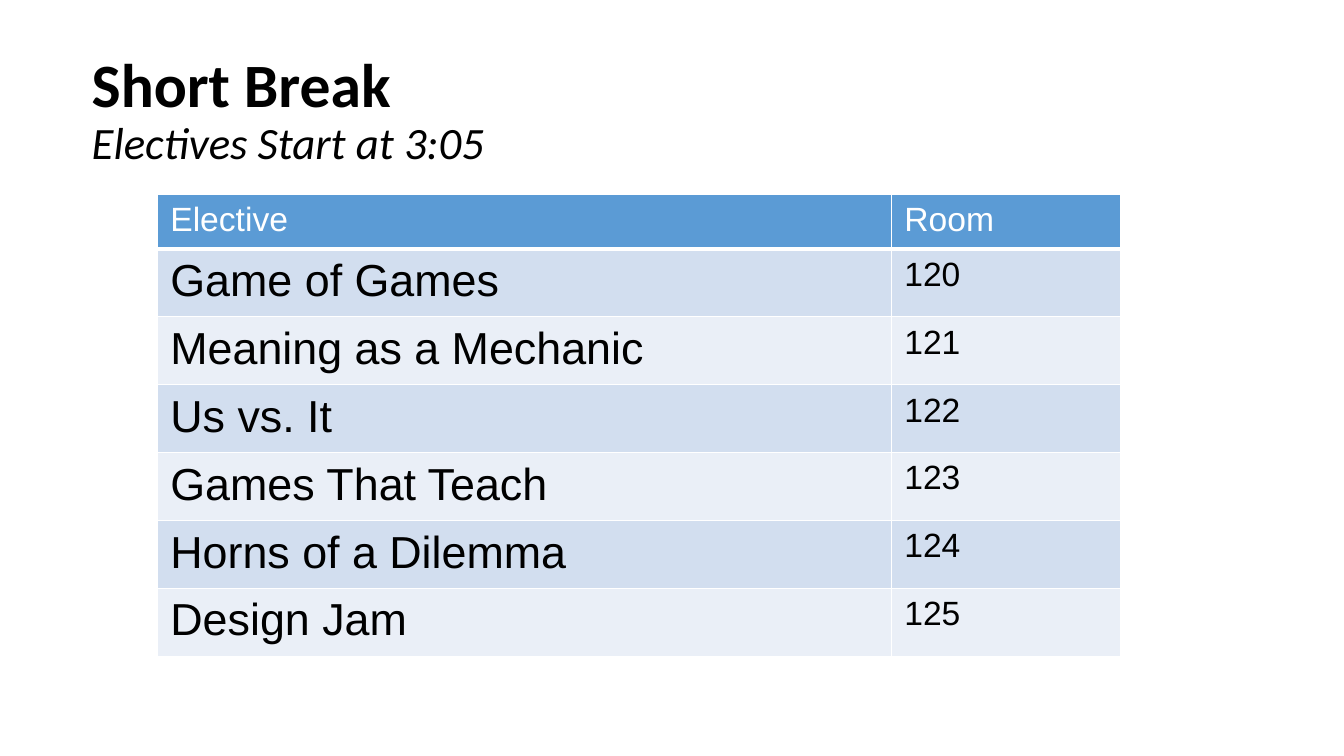
import pptx
import pptx.dml.color
import pptx.enum.text
import pptx.oxml
import pptx.oxml.ns
import pptx.util

Inches = pptx.util.Inches
ELECTIVES = [
    "Game of Games",
    "Meaning as a Mechanic",
    "Us vs. It",
    "Games That Teach",
    "Horns of a Dilemma",
    "Design Jam",
]
FIRST_ROOM = 120
COLUMN_WIDTHS = [7.28, 2.27]
HEADER_HEIGHT, ROW_HEIGHT = 0.53, 0.67
HEADER_FILL = "5B9BD5"
BAND_FILLS = ["D2DEEF", "EAEFF7"]
BLACK, WHITE = "000000", "FFFFFF"


def color(hex_text):
    """Turn a hex string into a colour."""
    return pptx.dml.color.RGBColor.from_string(hex_text)


def add_text(para, text, size, font="Arial", fill=BLACK, bold=False, italic=False):
    """Add one formatted run to a paragraph."""
    span = para.add_run()
    span.text = text
    span.font.size = pptx.util.Pt(size)
    span.font.name = font
    span.font.bold = bold
    span.font.italic = italic
    span.font.color.rgb = color(fill)


def set_margins(holder):
    """Give a text frame or table cell the slide's inner margins."""
    holder.margin_left = holder.margin_right = Inches(0.13)
    holder.margin_top = holder.margin_bottom = Inches(0.07)


def add_borders(cell, bottom_points):
    """Draw white lines around a table cell."""
    properties = cell._tc.get_or_add_tcPr()
    namespace = pptx.oxml.ns.nsdecls("a")
    for side, points in [("L", 1), ("R", 1), ("T", 1), ("B", bottom_points)]:
        properties.append(pptx.oxml.parse_xml(
            f'<a:ln{side} {namespace} w="{pptx.util.Pt(points)}"><a:solidFill>'
            f'<a:srgbClr val="{WHITE}"/></a:solidFill></a:ln{side}>'))


def fill_cell(cell, text, size, fill, text_fill=BLACK, bottom_points=1):
    """Write, border and colour one table cell."""
    set_margins(cell)
    add_borders(cell, bottom_points)
    cell.fill.solid()
    cell.fill.fore_color.rgb = color(fill)
    add_text(cell.text_frame.paragraphs[0], text, size, fill=text_fill)


def add_title(page, left, top, width, height):
    """Place the heading and its start time."""
    box = page.shapes.add_textbox(Inches(left), Inches(top), Inches(width), Inches(height))
    frame = box.text_frame
    frame.word_wrap = True
    frame.vertical_anchor = pptx.enum.text.MSO_ANCHOR.TOP
    set_margins(frame)
    para = frame.paragraphs[0]
    para.line_spacing = 0.9
    add_text(para, "Short Break", 44, font="Calibri", bold=True)
    para.add_line_break()
    add_text(para, "Electives Start at 3:05", 32, font="Calibri", italic=True)


def add_schedule(page, left, top):
    """Place the table of electives and rooms."""
    height = HEADER_HEIGHT + ROW_HEIGHT * len(ELECTIVES)
    table = page.shapes.add_table(
        len(ELECTIVES) + 1, len(COLUMN_WIDTHS), Inches(left), Inches(top),
        Inches(sum(COLUMN_WIDTHS)), Inches(height)).table
    for column, width in zip(table.columns, COLUMN_WIDTHS):
        column.width = Inches(width)
    for row in table.rows:
        row.height = Inches(ROW_HEIGHT)
    table.rows[0].height = Inches(HEADER_HEIGHT)
    for column, heading in enumerate(["Elective", "Room"]):
        fill_cell(table.cell(0, column), heading, 24, HEADER_FILL, WHITE, bottom_points=3)
    for index, elective in enumerate(ELECTIVES):
        fill = BAND_FILLS[index % 2]
        fill_cell(table.cell(index + 1, 0), elective, 32, fill)
        fill_cell(table.cell(index + 1, 1), str(FIRST_ROOM + index), 24, fill)


def main():
    """Build and save the deck."""
    deck = pptx.Presentation()
    deck.slide_width, deck.slide_height = Inches(13.33), Inches(7.5)
    page = deck.slides.add_slide(deck.slide_layouts[6])
    add_title(page, 0.78, 0.47, 11.77, 1.14)
    add_schedule(page, 1.56, 1.93)
    deck.save("out.pptx")


if __name__ == "__main__":
    main()
